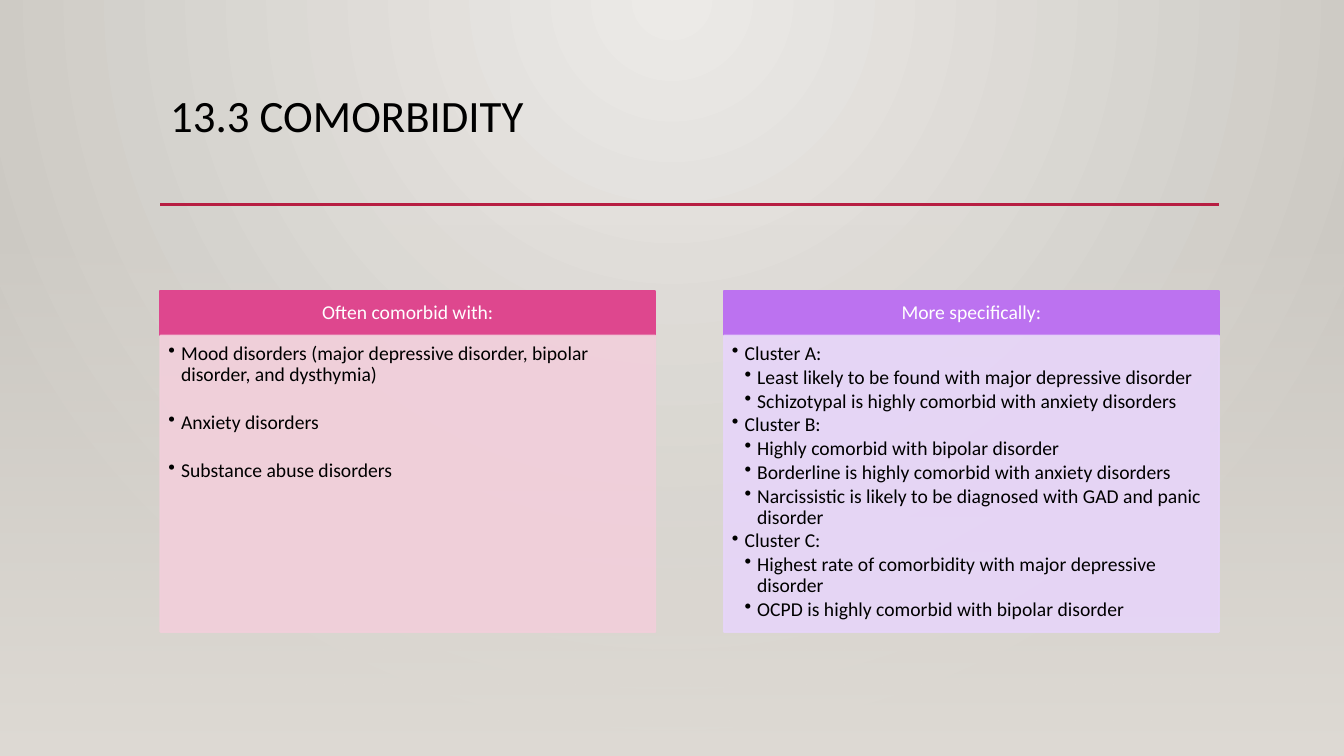
from lxml.etree import SubElement
from pptx import Presentation
from pptx.dml.color import RGBColor
from pptx.enum.shapes import MSO_CONNECTOR, MSO_SHAPE
from pptx.enum.text import MSO_ANCHOR, PP_ALIGN
from pptx.oxml import parse_xml
from pptx.oxml.ns import nsdecls, qn
from pptx.util import Inches, Pt

COLORS = {
    "black": "000000", "white": "FFFFFF", "rule": "B71E42",
    "glow": "ECEAE7", "edge": "CAC7C1", "floor": "DFDBD5",
    "pink": "DE478E", "pale pink": "F2CFDB",
    "violet": "BC72F0", "pale violet": "E7D5F9",
}
LEFT, WIDTH, COLUMN_STEP = 1.59, 4.91, 5.59
HEADER_TOP, HEADER_HEIGHT, BODY_HEIGHT = 2.89, 0.44, 2.94

COLUMNS = [
    ("Often comorbid with:", "pink", "pale pink", 18.9, [
        (0, "Mood disorders (major depressive disorder, bipolar disorder, and dysthymia)"),
        (0, "Anxiety disorders"),
        (0, "Substance abuse disorders"),
    ]),
    ("More specifically:", "violet", "pale violet", 1.8, [
        (0, "Cluster A:"),
        (1, "Least likely to be found with major depressive disorder"),
        (1, "Schizotypal is highly comorbid with anxiety disorders"),
        (0, "Cluster B:"),
        (1, "Highly comorbid with bipolar disorder"),
        (1, "Borderline is highly comorbid with anxiety disorders"),
        (1, "Narcissistic is likely to be diagnosed with GAD and panic disorder"),
        (0, "Cluster C:"),
        (1, "Highest rate of comorbidity with major depressive disorder"),
        (1, "OCPD is highly comorbid with bipolar disorder"),
    ]),
]
HEADER_FORMAT = {
    "word_wrap": True, "vertical_anchor": MSO_ANCHOR.MIDDLE,
    "margin_left": Inches(0.11), "margin_top": Inches(0.06),
    "margin_right": Inches(0.11), "margin_bottom": Inches(0.06),
}
BODY_FORMAT = {
    "word_wrap": True, "vertical_anchor": MSO_ANCHOR.TOP,
    "margin_left": Inches(0.08), "margin_top": Inches(0.08),
    "margin_right": Inches(0.11), "margin_bottom": Inches(0.12),
}


def set_gradient(fill, properties, stops, direction):
    fill.gradient()
    gradient = properties.find(qn("a:gradFill"))
    stop_xml = "".join(
        f'<a:gs pos="{position}"><a:srgbClr val="{COLORS[color]}">'
        f'<a:alpha val="{alpha}"/></a:srgbClr></a:gs>'
        for position, color, alpha in stops
    )
    properties.replace(gradient, parse_xml(
        f'<a:gradFill {nsdecls("a")} rotWithShape="1">'
        f"<a:gsLst>{stop_xml}</a:gsLst>{direction}</a:gradFill>"
    ))


def write_paragraph(paragraph, text, size, color, alignment, space_after=0):
    paragraph.text = text
    paragraph.alignment = alignment
    paragraph.line_spacing = 0.9
    paragraph.space_after = Pt(space_after)
    for name, value in {"size": Pt(size), "name": "Calibri"}.items():
        setattr(paragraph.font, name, value)
    paragraph.font.color.rgb = RGBColor.from_string(COLORS[color])


presentation = Presentation()
presentation.slide_width = Inches(13.33)
presentation.slide_height = Inches(7.5)
slide = presentation.slides.add_slide(presentation.slide_layouts[6])

background_fill = slide.background.fill
set_gradient(
    background_fill, slide.element.cSld.bg.bgPr,
    [(0, "glow", 100000), (100000, "edge", 100000)],
    '<a:path path="circle"><a:fillToRect l="43000" t="0" r="43000" b="100000"/></a:path>',
)

floor = slide.shapes.add_shape(
    MSO_SHAPE.RECTANGLE, 0, Inches(2.21), Inches(13.33), Inches(5.29))
floor.shadow.inherit = False
floor.line.fill.background()
set_gradient(
    floor.fill, floor.element.spPr,
    [(0, "floor", 0), (100000, "floor", 100000)],
    '<a:lin ang="5400000" scaled="0"/>',
)

title = slide.shapes.add_textbox(Inches(LEFT), Inches(0.88), Inches(10.5), Inches(1.15))
title.text_frame.word_wrap = True
write_paragraph(title.text_frame.paragraphs[0], "13.3 COMORBIDITY", 32, "black", PP_ALIGN.LEFT)

rule = slide.shapes.add_connector(
    MSO_CONNECTOR.STRAIGHT, Inches(LEFT), Inches(2.03), Inches(12.09), Inches(2.03))
rule.line.color.rgb = RGBColor.from_string(COLORS["rule"])
rule.line.width = Pt(2.5)
SubElement(rule.element.spPr, qn("a:effectLst"))

for index, (heading, header_color, body_color, gap, items) in enumerate(COLUMNS):
    left = Inches(LEFT + index * COLUMN_STEP)
    header = slide.shapes.add_shape(
        MSO_SHAPE.RECTANGLE, left, Inches(HEADER_TOP), Inches(WIDTH), Inches(HEADER_HEIGHT))
    body = slide.shapes.add_shape(
        MSO_SHAPE.RECTANGLE, left, Inches(HEADER_TOP + HEADER_HEIGHT),
        Inches(WIDTH), Inches(BODY_HEIGHT))

    for shape, color, text_format in (
        (header, header_color, HEADER_FORMAT), (body, body_color, BODY_FORMAT),
    ):
        shape.shadow.inherit = False
        shape.fill.solid()
        shape.fill.fore_color.rgb = RGBColor.from_string(COLORS[color])
        shape.line.color.rgb = RGBColor.from_string(COLORS[color])
        shape.line.width = Pt(1.25)
        for name, value in text_format.items():
            setattr(shape.text_frame, name, value)

    for color_element in body.element.spPr.iter(qn("a:srgbClr")):
        SubElement(color_element, qn("a:alpha"), val="90000")

    write_paragraph(header.text_frame.paragraphs[0], heading, 14, "white", PP_ALIGN.CENTER)
    for number, (level, text) in enumerate(items):
        frame = body.text_frame
        paragraph = frame.add_paragraph() if number else frame.paragraphs[0]
        paragraph.level = level + 1
        properties = paragraph._p.get_or_add_pPr()
        properties.set("marL", str(Inches(0.125 * (level + 1))))
        properties.set("indent", str(-Inches(0.125)))
        SubElement(properties, qn("a:buChar"), char="•")
        write_paragraph(paragraph, text, 14, "black", PP_ALIGN.LEFT, gap)

presentation.save("out.pptx")
